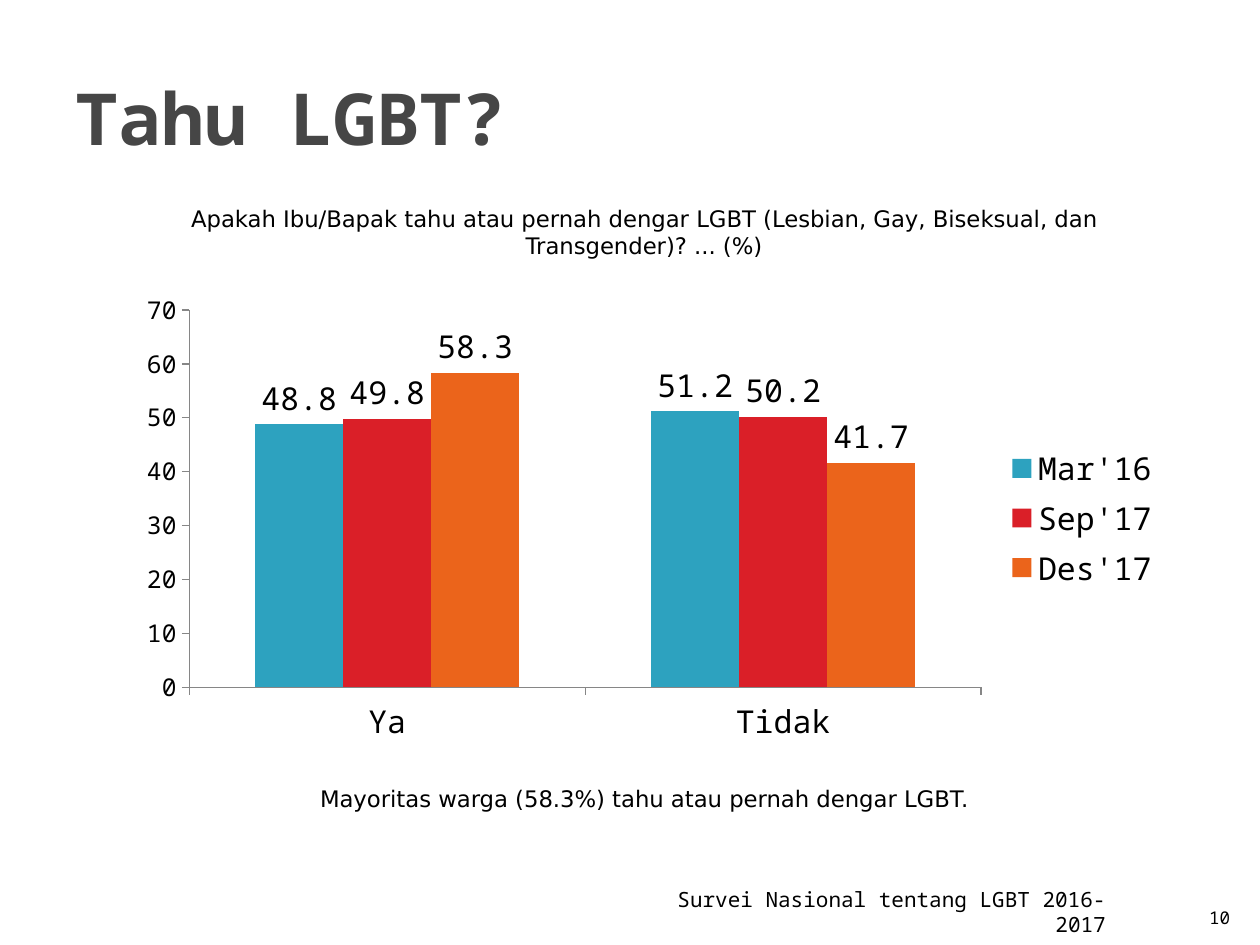
from pptx import Presentation
from pptx.chart.data import CategoryChartData
from pptx.dml.color import RGBColor
from pptx.enum.chart import XL_CHART_TYPE as Kind, XL_LABEL_POSITION as Spot
from pptx.enum.chart import XL_LEGEND_POSITION as Side, XL_TICK_MARK as Tick
from pptx.enum.text import MSO_ANCHOR as Anchor, MSO_AUTO_SIZE as Auto, PP_ALIGN as Align
from pptx.util import Pt

BLACK = RGBColor(0, 0, 0)
DARK = RGBColor(0x46, 0x46, 0x46)
GRAY = RGBColor(0x86, 0x86, 0x86)
TEAL = RGBColor(0x2D, 0xA2, 0xBF)
RED = RGBColor(0xDA, 0x1F, 0x28)
ORANGE = RGBColor(0xEB, 0x64, 0x1B)
MONO, SANS = "Noto Sans Mono", "DejaVu Sans"
WAVES = [
    ("Mar'16", (48.8, 51.2), TEAL),
    ("Sep'17", (49.8, 50.2), RED),
    ("Des'17", (58.3, 41.7), ORANGE),
]


def style(font, size, name=MONO, color=BLACK, bold=False):
    """Set size, face, colour and weight of a font."""
    font.size, font.name, font.bold = Pt(size), name, bold
    font.color.rgb = color


def add_title(slide, text):
    """Place and format the title."""
    title = slide.shapes.title
    title.left, title.top, title.width, title.height = map(Pt, (36, 21.6, 648, 90))
    frame = title.text_frame
    frame.text = text
    frame.auto_size = Auto.NONE
    frame.vertical_anchor = Anchor.MIDDLE
    para = frame.paragraphs[0]
    para.alignment = Align.LEFT
    style(para.font, 41, color=DARK, bold=True)


def add_text(slide, text, box, size, name=MONO, align=Align.RIGHT, anchor=Anchor.MIDDLE):
    """Add a wrapped one-paragraph text box."""
    frame = slide.shapes.add_textbox(*map(Pt, box)).text_frame
    frame.word_wrap = True
    frame.vertical_anchor = anchor
    para = frame.paragraphs[0]
    para.text = text
    para.alignment = align
    style(para.font, size, name)


def add_bars(slide, box):
    """Add the clustered column chart of survey waves."""
    data = CategoryChartData(number_format="0.0")
    data.categories = ["Ya", "Tidak"]
    for name, vals, _ in WAVES:
        data.add_series(name, vals)
    chart = slide.shapes.add_chart(Kind.COLUMN_CLUSTERED, *map(Pt, box), data).chart
    style(chart.font, 18)
    chart.has_title = False
    chart.has_legend = True
    chart.legend.position = Side.RIGHT
    chart.legend.include_in_layout = False

    plot = chart.plots[0]
    plot.gap_width, plot.overlap = 150, 0
    plot.vary_by_categories = False
    for series, (_, _, color) in zip(plot.series, WAVES):
        series.format.fill.solid()
        series.format.fill.fore_color.rgb = color
        series.invert_if_negative = False
        labels = series.data_labels
        labels.show_value = True
        labels.position = Spot.OUTSIDE_END
        labels.number_format, labels.number_format_is_linked = "0.0", False

    for axis, size in ((chart.category_axis, 18), (chart.value_axis, 14)):
        axis.has_major_gridlines = False
        axis.major_tick_mark = Tick.OUTSIDE
        axis.minor_tick_mark = Tick.NONE
        axis.format.line.color.rgb = GRAY
        axis.format.line.width = Pt(0.75)
        style(axis.tick_labels.font, size)
    axis = chart.value_axis
    axis.minimum_scale, axis.maximum_scale, axis.major_unit = 0, 70, 10
    axis.tick_labels.number_format = "0"
    axis.tick_labels.number_format_is_linked = False


def main():
    """Build and save the slide."""
    deck = Presentation()
    deck.slide_width, deck.slide_height = Pt(720), Pt(540)
    slide = deck.slides.add_slide(deck.slide_layouts[5])
    add_title(slide, "Tahu LGBT?")
    add_text(slide, "10", (681, 504.7, 29, 29), 10, anchor=Anchor.BOTTOM)
    add_text(slide, "Survei Nasional tentang LGBT 2016-2017", (357, 502, 282, 37.5), 12)
    ask = "Apakah Ibu/Bapak tahu atau pernah dengar LGBT (Lesbian, Gay, Biseksual, dan Transgender)? ... (%)"
    add_text(slide, ask, (66, 102.5, 604, 60), 13, SANS, Align.CENTER)
    add_bars(slide, (72, 162, 598, 268))
    note = "Mayoritas warga (58.3%) tahu atau pernah dengar LGBT."
    add_text(slide, note, (66, 426.5, 604, 60), 13, SANS, Align.CENTER)
    deck.save("out.pptx")


if __name__ == "__main__":
    main()
